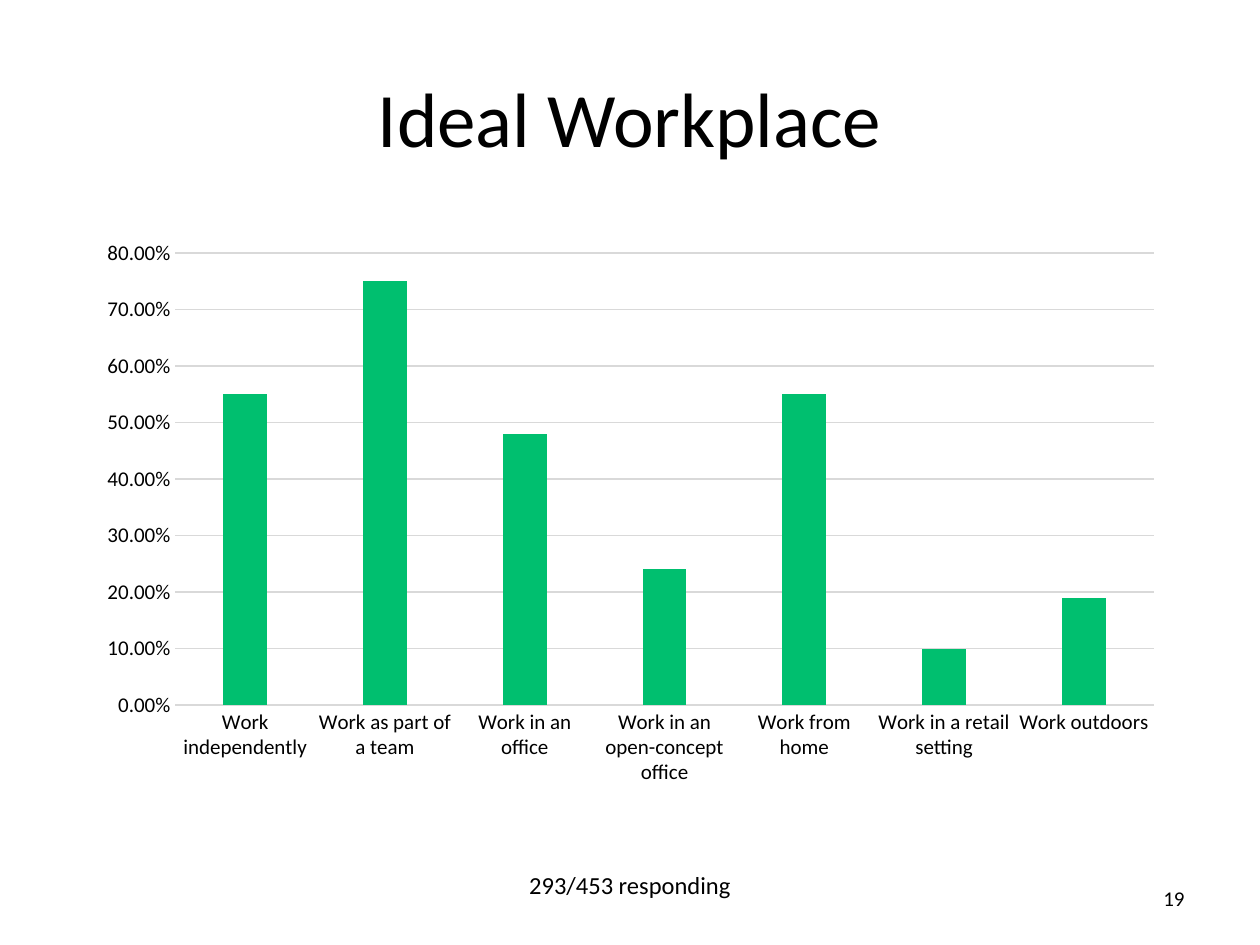
from pptx import Presentation
from pptx.chart.data import CategoryChartData
from pptx.dml.color import RGBColor
from pptx.enum.chart import XL_CHART_TYPE, XL_TICK_MARK
from pptx.enum.text import MSO_ANCHOR, PP_ALIGN
from pptx.util import Inches, Pt

COLUMNS = XL_CHART_TYPE.COLUMN_CLUSTERED
NO_TICKS = XL_TICK_MARK.NONE
TOP, MIDDLE = MSO_ANCHOR.TOP, MSO_ANCHOR.MIDDLE
CENTER, RIGHT = PP_ALIGN.CENTER, PP_ALIGN.RIGHT

BLACK = RGBColor(0x00, 0x00, 0x00)
GREEN = RGBColor(0x00, 0xBF, 0x6F)
GRAY = RGBColor(0xD9, 0xD9, 0xD9)
FONT = "Calibri"

TITLE = "Ideal Workplace"
RESPONSES = "293/453 responding"
PAGE_NUMBER = "19"
SHARES = {
    "Work independently": 0.55,
    "Work as part of a team": 0.75,
    "Work in an office": 0.48,
    "Work in an open-concept office": 0.24,
    "Work from home": 0.55,
    "Work in a retail setting": 0.10,
    "Work outdoors": 0.19,
}

# left, top, width, height in inches
TITLE_AREA = (0.5, 0.3, 9, 1.25)
CHART_AREA = (0.68, 1.82, 8.65, 4.5)
RESPONSES_AREA = (4.09, 6.86, 1.82, 0.34)
NUMBER_AREA = (7.7, 6.93, 1.8, 0.4)


def to_inches(area):
    return [Inches(length) for length in area]


def style_font(font, size):
    font.name = FONT
    font.size = Pt(size)
    font.color.rgb = BLACK


def style_line(line):
    line.color.rgb = GRAY
    line.width = Pt(0.75)


def fill_text(box, area, text, size, align, anchor, wrap=True):
    box.left, box.top, box.width, box.height = to_inches(area)
    frame = box.text_frame
    frame.text = text
    frame.word_wrap = wrap
    frame.vertical_anchor = anchor
    para = frame.paragraphs[0]
    para.alignment = align
    style_font(para.runs[0].font, size)


def add_share_chart(page):
    data = CategoryChartData(number_format="0.00%")
    data.categories = list(SHARES)
    data.add_series("Series 1", list(SHARES.values()))
    chart = page.shapes.add_chart(COLUMNS, *to_inches(CHART_AREA), data).chart
    chart.has_legend = False
    chart.has_title = False
    style_font(chart.font, 10)

    plot = chart.plots[0]
    plot.gap_width = 219
    plot.overlap = -27
    plot.vary_by_categories = False
    fill = plot.series[0].format.fill
    fill.solid()
    fill.fore_color.rgb = GREEN

    for axis in (chart.category_axis, chart.value_axis):
        axis.major_tick_mark = axis.minor_tick_mark = NO_TICKS
        style_font(axis.tick_labels.font, 12)
    style_line(chart.category_axis.format.line)

    values = chart.value_axis
    values.minimum_scale, values.maximum_scale, values.major_unit = 0, 0.8, 0.1
    values.tick_labels.number_format = "0.00%"
    values.tick_labels.number_format_is_linked = False
    values.format.line.fill.background()
    style_line(values.major_gridlines.format.line)


def main():
    deck = Presentation()
    deck.slide_width, deck.slide_height = Inches(10), Inches(7.5)
    page = deck.slides.add_slide(deck.slide_layouts.get_by_name("Title Only"))
    fill_text(page.shapes.title, TITLE_AREA, TITLE, 44, CENTER, MIDDLE)
    add_share_chart(page)
    for area, text, size, align, anchor, wrap in (
        (RESPONSES_AREA, RESPONSES, 14, CENTER, TOP, False),
        (NUMBER_AREA, PAGE_NUMBER, 12, RIGHT, MIDDLE, True),
    ):
        box = page.shapes.add_textbox(*to_inches(area))
        fill_text(box, area, text, size, align, anchor, wrap)
    deck.save("out.pptx")


if __name__ == "__main__":
    main()
